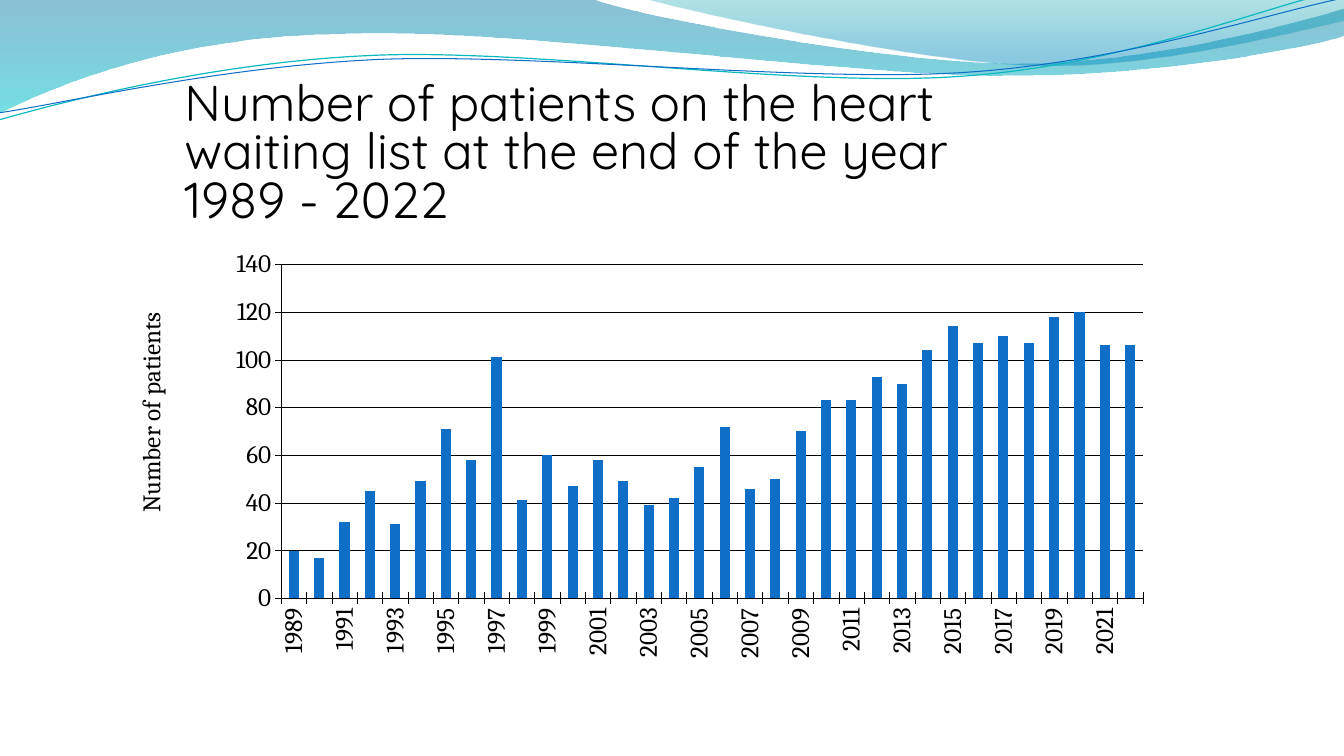
from math import cos, radians, sin

from lxml import etree
from pptx import Presentation
from pptx.chart.data import CategoryChartData
from pptx.dml.color import RGBColor
from pptx.enum.chart import XL_CHART_TYPE as ChartType, XL_TICK_MARK as TickMark
from pptx.enum.text import MSO_ANCHOR as Anchor
from pptx.oxml import parse_xml
from pptx.oxml.ns import nsdecls, qn
from pptx.util import Inches, Pt

BLACK = RGBColor(0, 0, 0)
BLUE = RGBColor(0x0F, 0x6F, 0xC6)
TURQUOISE = RGBColor(0x0A, 0xB8, 0xBF)
DEEP_BLUE = RGBColor(0x00, 0x74, 0xA1)
CYAN = RGBColor(0x00, 0xC6, 0xCF)
TEAL = RGBColor(0x00, 0xA1, 0xA9)
SKY = RGBColor(0x00, 0x8B, 0xBF)
TILT = 357.3


def draw_wave(shapes, start, segments, closed, tilt=0, pivot=(0, 0)):
    points = [start]
    for segment in segments:
        points.extend(zip(segment[::2], segment[1::2]))
    c, s = cos(radians(tilt)), sin(radians(tilt))
    offsets = [(x - pivot[0], y - pivot[1]) for x, y in points]
    points = [(Inches(pivot[0] + x * c + y * s), Inches(pivot[1] - x * s + y * c))
              for x, y in offsets]
    builder = shapes.build_freeform(*points[0])
    builder.add_line_segments(points[1:], close=closed)
    wave = builder.convert_to_shape()
    wave.rotation = tilt
    wave.shadow.inherit = False
    corners = iter(list(wave._element.iter(qn("a:lnTo"))))
    for segment in segments:
        corner = next(corners)
        if len(segment) == 6:
            curve = etree.Element(qn("a:cubicBezTo"))
            corner.addprevious(curve)
            for part in (corner, next(corners), next(corners)):
                curve.append(part[0])
                part.getparent().remove(part)
    return wave


def set_layout(owner, index, **values):
    old = owner.find(qn("c:layout"))
    if old is not None:
        owner.remove(old)
    parts = "".join(f'<c:{name} val="{value}"/>' for name, value in values.items())
    owner.insert(index, parse_xml(
        f'<c:layout {nsdecls("c")}><c:manualLayout>{parts}</c:manualLayout></c:layout>'))


deck = Presentation()
deck.slide_width, deck.slide_height = Inches(13.33), Inches(7.5)
page = deck.slides.add_slide(deck.slide_layouts[6])

bands = [
    ((0, 0), [(5.87, -0.01), (6.34, 0.17, 8.84, 0.63, 10.11, 0.63),
              (11.37, 0.63, 12.77, 0.26, 13.33, 0.09), (13.34, 0.36),
              (13.11, 0.44, 11.59, 0.76, 9.94, 0.75),
              (8.29, 0.75, 5.09, 0.28, 3.43, 0.34),
              (1.72, 0.36, 0.61, 0.83, -0.02, 1.13)],
     [(0, DEEP_BLUE, 45), (1, CYAN, 55)]),
    ((6.38, -0.01), [(6.79, 0.11, 9.09, 0.62, 10.25, 0.65),
                     (11.4, 0.69, 12.82, 0.32, 13.33, 0.21), (13.33, 0)],
     [(0, TEAL, 30), (0.8, SKY, 45)]),
]
for start, segments, stops in bands:
    band = draw_wave(page.shapes, start, segments, True)
    band.line.fill.background()
    band.fill.gradient()
    band.fill.gradient_angle = 270
    for stop, (position, color, opacity) in zip(band.fill.gradient_stops, stops):
        stop.position = position
        stop.color.rgb = color
    for tint, (position, color, opacity) in zip(band._element.spPr.iter(qn("a:srgbClr")), stops):
        etree.SubElement(tint, qn("a:alpha")).set("val", str(opacity * 1000))

strands = [
    ((-0.01, 1.19), [(0.63, 1.01, 2.1, 0.62, 3.69, 0.55), (5.27, 0.48, 7.89, 0.87, 9.49, 0.76),
                     (11.1, 0.66, 12.51, 0.08, 13.3, -0.1)], (6.65, 0.57), TURQUOISE, 0.85),
    ((-0.01, 1.12), [(0.62, 1.03, 2.18, 0.66, 3.77, 0.59), (5.37, 0.53, 7.96, 0.82, 9.55, 0.72),
                     (11.14, 0.62, 12.55, 0.14, 13.33, -0.02)], (6.67, 0.59), BLUE, 0.75),
]
for start, segments, pivot, color, width in strands:
    strand = draw_wave(page.shapes, start, segments, False, TILT, pivot)
    strand.fill.background()
    strand.line.color.rgb = color
    strand.line.width = Pt(width)

title_box = page.shapes.add_textbox(Inches(1.73), Inches(0.77), Inches(8.41), Inches(1.25))
frame = title_box.text_frame
frame.word_wrap = True
frame.vertical_anchor = Anchor.TOP
frame.text = "Number of patients on the heart waiting list at the end of the year 1989 - 2022"
para = frame.paragraphs[0]
para.line_spacing = 0.8
span = para.runs[0]
span.font.size = Pt(36)
span.font.name = "Quicksand"
span.font.color.rgb = BLACK

data = CategoryChartData()
data.categories = [str(year) for year in range(1989, 2023)]
data.add_series("Series 1", [
    20, 17, 32, 45, 31, 49, 71, 58, 101, 41, 60, 47, 58, 49, 39, 42, 55,
    72, 46, 50, 70, 83, 83, 93, 90, 104, 114, 107, 110, 107, 118, 120, 106, 106])
chart = page.shapes.add_chart(ChartType.COLUMN_STACKED, Inches(0.94), Inches(2.24),
                              Inches(11.55), Inches(4.8), data).chart
chart.has_title = False
chart.has_legend = False
chart.font.size = Pt(18)
chart.font.name = "Cambria"
chart.font.color.rgb = BLACK

plot = chart.plots[0]
plot.vary_by_categories = False
plot.gap_width = 150
plot.overlap = 100
bars = plot.series[0].format.fill
bars.solid()
bars.fore_color.rgb = BLUE

years, patients = chart.category_axis, chart.value_axis
patients.minimum_scale, patients.maximum_scale, patients.major_unit = 0, 140, 20
patients.has_major_gridlines = True
for axis in (years, patients):
    axis.major_tick_mark = TickMark.CROSS
    axis.minor_tick_mark = TickMark.NONE
    label_font = axis.tick_labels.font
    label_font.size = Pt(18)
    label_font.name = "Cambria"
    label_font.color.rgb = BLACK
for line in (years.format.line, patients.format.line, patients.major_gridlines.format.line):
    line.color.rgb = BLACK
    line.width = Pt(0.25)
years._element.find(qn("c:txPr")).find(qn("a:bodyPr")).set("rot", "-5400000")

axis_title = patients.axis_title
axis_title.text_frame.text = "Number of patients"
title_font = axis_title.text_frame.paragraphs[0].runs[0].font
title_font.size = Pt(18)
title_font.bold = False
title_font.name = "Cambria"
title_font.color.rgb = BLACK
axis_title.text_frame._txBody.find(qn("a:bodyPr")).set("rot", "-5400000")
set_layout(axis_title._element, 1, xMode="edge", yMode="edge", x=0.03, y=0.17)
set_layout(chart._chartSpace.chart.plotArea, 0, layoutTarget="inner", xMode="edge",
           yMode="edge", x=0.16, y=0.08, w=0.74, h=0.69)

deck.save("out.pptx")
